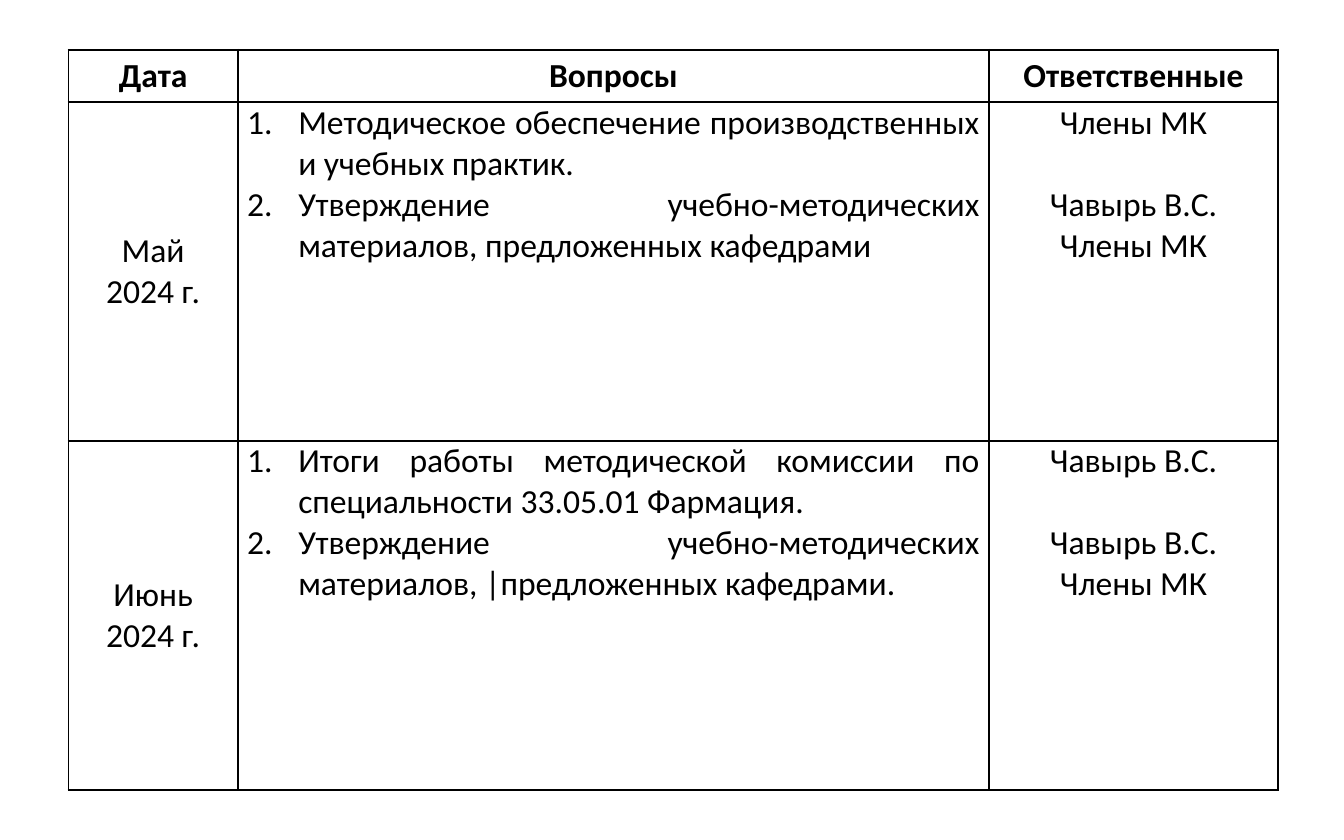
from lxml.etree import SubElement
from pptx import Presentation
from pptx.dml.color import RGBColor
from pptx.enum.text import MSO_ANCHOR as Anchor, PP_ALIGN as Align
from pptx.oxml import parse_xml
from pptx.oxml.ns import nsdecls, qn
from pptx.util import Inches, Pt

BLACK, WHITE = "000000", "FFFFFF"
COLUMN_WIDTHS = [1.26, 5.59, 2.15]
ROW_HEIGHTS = [0.39, 2.52, 2.6]
LINE_GAP = 22  # one text line, in points

HEADERS = ["Дата", "Вопросы", "Ответственные"]
# Each meeting: date lines, questions, people for the first and second question
MEETINGS = [
    (["Май", "2024 г."],
     ["Методическое обеспечение производственных и учебных практик.",
      "Утверждение учебно-методических материалов, предложенных кафедрами"],
     ["Члены МК", "Чавырь В.С.", "Члены МК"]),
    (["Июнь", "2024 г."],
     ["Итоги работы методической комиссии по специальности 33.05.01 Фармация.",
      "Утверждение учебно-методических материалов, |предложенных кафедрами."],
     ["Чавырь В.С.", "Чавырь В.С.", "Члены МК"]),
]


def color(value):
    return RGBColor.from_string(value)


class SlideBuilder:
    font = {"name": "Calibri", "size": Pt(18)}
    margins = {"margin_left": Inches(0.07), "margin_right": Inches(0.07),
               "margin_top": 0, "margin_bottom": 0}

    def __init__(self, slide):
        self.slide = slide

    def background(self, value):
        fill = self.slide.background.fill
        fill.solid()
        fill.fore_color.rgb = color(value)

    def table(self, left, top, widths, heights):
        frame = self.slide.shapes.add_table(
            len(heights), len(widths), Inches(left), Inches(top),
            Inches(sum(widths)), Inches(sum(heights)))
        table = frame.table
        table.first_row = table.horz_banding = False
        for column, width in zip(table.columns, widths):
            column.width = Inches(width)
        for row, height in zip(table.rows, heights):
            row.height = Inches(height)
        return table

    def cell(self, cell, lines, anchor=Anchor.MIDDLE, align=Align.CENTER,
             bold=False, numbered=False, gap_before=None):
        for name, value in {**self.margins, "vertical_anchor": anchor}.items():
            setattr(cell, name, value)
        cell.fill.background()
        self.borders(cell)
        for index, text in enumerate(lines):
            frame = cell.text_frame
            paragraph = frame.add_paragraph() if index else frame.paragraphs[0]
            paragraph.alignment = align
            if index == gap_before:
                paragraph.space_before = Pt(LINE_GAP)
            if numbered:
                self.number(paragraph)
            run = paragraph.add_run()
            run.text = text
            for name, value in {**self.font, "bold": bold}.items():
                setattr(run.font, name, value)
            run.font.color.rgb = color(BLACK)

    def borders(self, cell):
        properties = cell._tc.get_or_add_tcPr()
        for index, side in enumerate(["lnL", "lnR", "lnT", "lnB"]):
            properties.insert(index, parse_xml(
                f'<a:{side} {nsdecls("a")} w="{Pt(1)}"><a:solidFill>'
                f'<a:srgbClr val="{BLACK}"/></a:solidFill></a:{side}>'))

    def number(self, paragraph):
        properties = paragraph._p.get_or_add_pPr()
        properties.set("marL", str(Inches(0.38)))
        properties.set("indent", str(-Inches(0.38)))
        SubElement(properties, qn("a:buFont"), typeface="+mj-lt")
        SubElement(properties, qn("a:buAutoNum"), type="arabicPeriod")


def main():
    presentation = Presentation()
    presentation.slide_width = Inches(10)
    presentation.slide_height = Inches(6.25)
    builder = SlideBuilder(presentation.slides.add_slide(presentation.slide_layouts[6]))
    builder.background(WHITE)

    # Header row
    table = builder.table(0.51, 0.37, COLUMN_WIDTHS, ROW_HEIGHTS)
    for column, header in enumerate(HEADERS):
        builder.cell(table.cell(0, column), [header], bold=True)

    # One row per meeting
    for row, (date, questions, people) in enumerate(MEETINGS, start=1):
        builder.cell(table.cell(row, 0), date)
        builder.cell(table.cell(row, 1), questions, anchor=Anchor.TOP,
                     align=Align.JUSTIFY, numbered=True)
        builder.cell(table.cell(row, 2), people, anchor=Anchor.TOP, gap_before=1)

    presentation.save("out.pptx")


if __name__ == "__main__":
    main()
